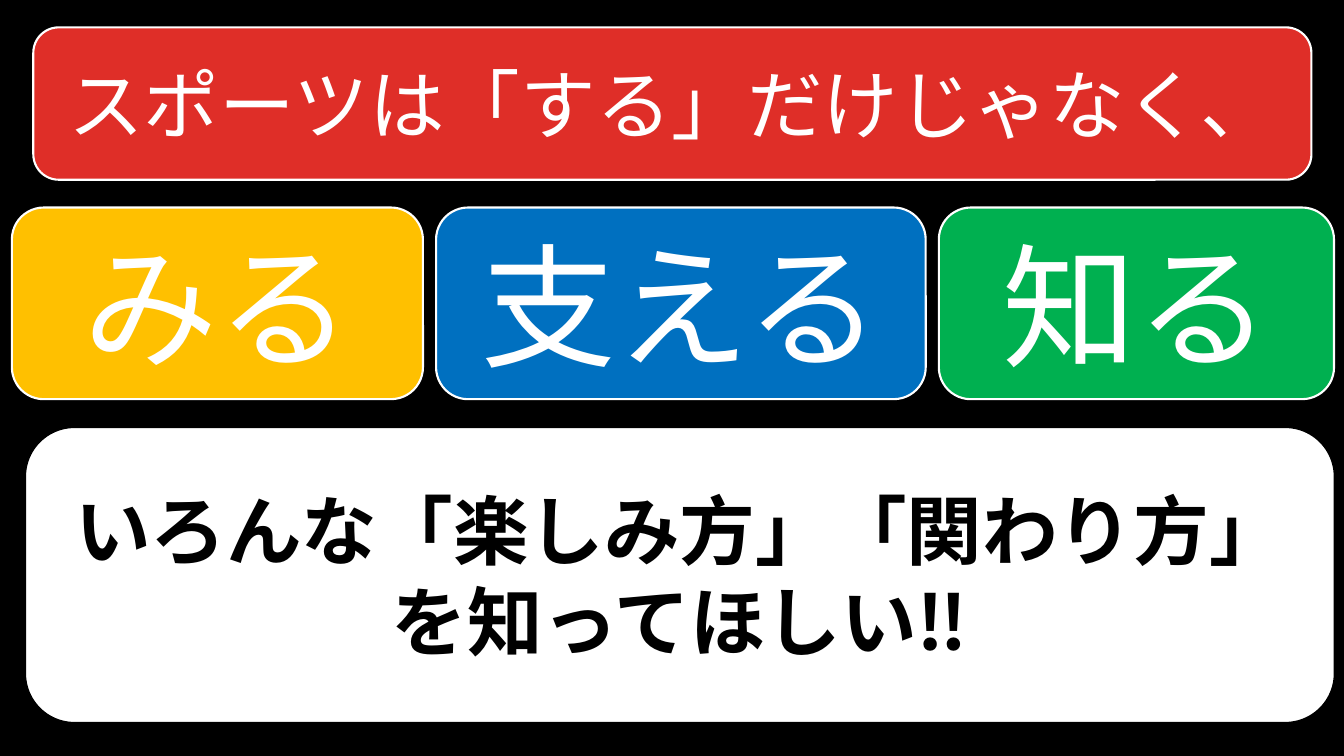
from pptx import Presentation
from pptx import util as u
from pptx.dml.color import RGBColor
from pptx.enum import shapes, text

FONT = "Calibri"
WHITE = "FFFFFF"
BLACK = "000000"


def paint(color_format, color):
    color_format.rgb = RGBColor.from_string(color)


def set_background(s, color):
    fill = s.background.fill
    fill.solid()
    paint(fill.fore_color, color)


def add_card(s, box, label, fill, size, color=WHITE, line=WHITE, width=1.5, bold=False):
    sp = s.shapes.add_shape(
        shapes.MSO_SHAPE.ROUNDED_RECTANGLE, *(u.Cm(v) for v in box))
    sp.shadow.inherit = False
    sp.fill.solid()
    paint(sp.fill.fore_color, fill)
    paint(sp.line.color, line)
    sp.line.width = u.Pt(width)
    tf = sp.text_frame
    tf.word_wrap = True
    tf.vertical_anchor = text.MSO_ANCHOR.MIDDLE
    tf.text = label
    p = tf.paragraphs[0]
    p.alignment = text.PP_ALIGN.CENTER
    r = p.runs[0]
    r.font.name = FONT
    r.font.size = u.Pt(size)
    r.font.bold = bold
    paint(r.font.color, color)


def add_card_row(s, left, top, height, gap, cards):
    for label, width, fill in cards:
        add_card(s, (left, top, width, height), label, fill, 96)
        left += width + gap


def main():
    prs = Presentation()
    prs.slide_width = u.Cm(33.87)
    prs.slide_height = u.Cm(19.05)
    s = prs.slides.add_slide(prs.slide_layouts[6])
    set_background(s, BLACK)
    add_card(s, (0.84, 0.69, 32.21, 3.84),
             "スポーツは「する」だけじゃなく、", "DF2E28", 54)
    add_card_row(s, 0.3, 5.23, 4.83, 0.33, [
        ("みる", 10.36, "FFC000"),
        ("支える", 12.34, "0070C0"),
        ("知る", 9.96, "00B050"),
    ])
    add_card(s, (0.64, 10.77, 32.99, 7.44),
             "いろんな「楽しみ方」「関わり方」を知ってほしい‼", WHITE, 54,
             color=BLACK, line=BLACK, width=1, bold=True)
    prs.save("out.pptx")


if __name__ == "__main__":
    main()
